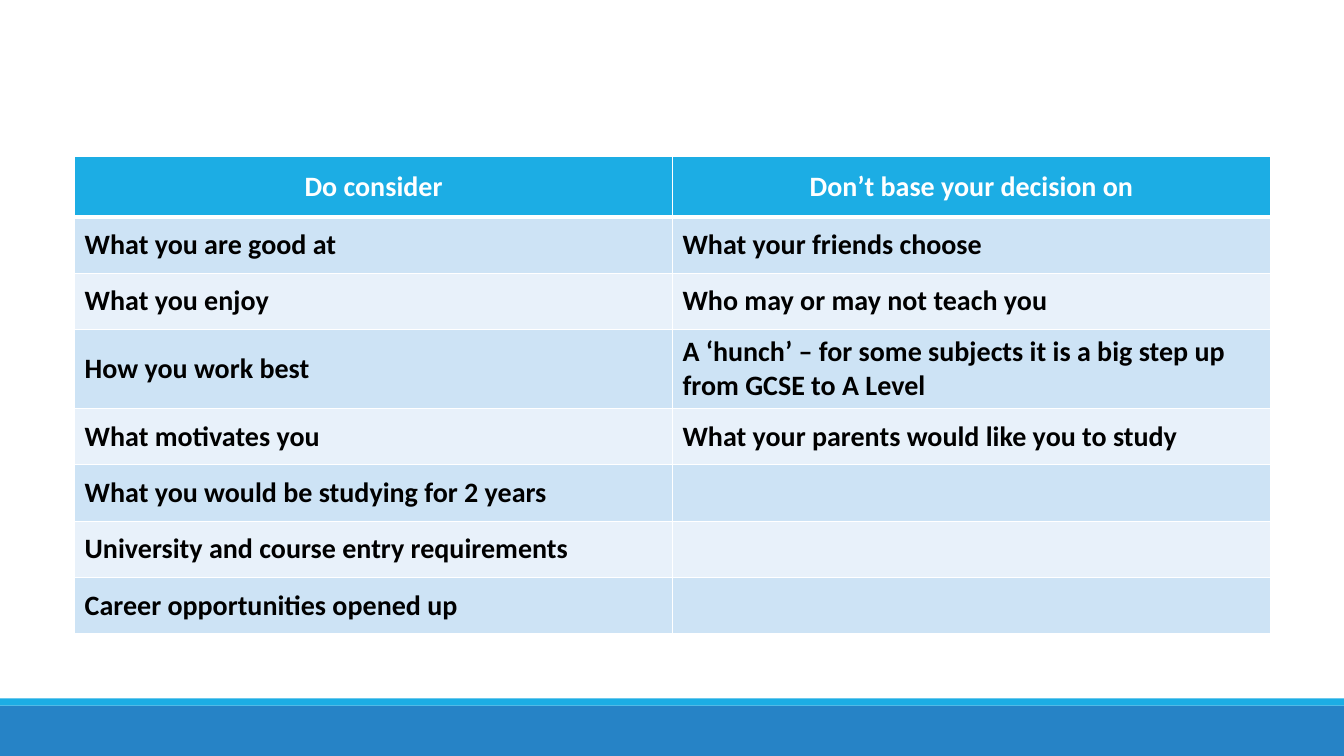
from lxml import etree
from pptx import Presentation
from pptx.dml.color import RGBColor
from pptx.enum.shapes import MSO_SHAPE
from pptx.enum.text import MSO_ANCHOR, PP_ALIGN
from pptx.oxml.ns import qn
from pptx.util import Inches, Pt

RECT = MSO_SHAPE.RECTANGLE
MIDDLE = MSO_ANCHOR.MIDDLE
LEFT, CENTER = PP_ALIGN.LEFT, PP_ALIGN.CENTER

COLORS = {
    "header": "1CADE4",
    "footer": "2683C6",
    "odd": "CDE3F5",
    "even": "E8F1FA",
    "white": "FFFFFF",
    "black": "000000",
}
ROWS = [
    ("Do consider", "Don’t base your decision on"),
    ("What you are good at", "What your friends choose"),
    ("What you enjoy", "Who may or may not teach you"),
    ("How you work best",
     "A ‘hunch’ – for some subjects it is a big step up from GCSE to A Level"),
    ("What motivates you", "What your parents would like you to study"),
    ("What you would be studying for 2 years", ""),
    ("University and course entry requirements", ""),
    ("Career opportunities opened up", ""),
]
BANDS = [("footer", 7, 0.5), ("header", 6.93, 0.07)]  # color, top, height
FONT = {"name": "Calibri", "size": Pt(20), "bold": True}
SLIDE_W, SLIDE_H = 13.33, 7.5
TABLE_LEFT, TABLE_TOP, COL_W = 0.74, 1.55, 5.93
HEADER_H, ROW_H = 0.6, 0.56


def rgb(name):
    return RGBColor.from_string(COLORS[name])


def add_borders(cell, widths):
    """Draw white cell borders; widths are points for left, right, top, bottom."""
    tc_pr = cell._tc.get_or_add_tcPr()
    for side, width in zip("LRTB", widths):
        ln = etree.SubElement(tc_pr, qn(f"a:ln{side}"), w=str(Pt(width)))
        fill = etree.SubElement(ln, qn("a:solidFill"))
        etree.SubElement(fill, qn("a:srgbClr"), val=COLORS["white"])


def fill_cell(cell, text, row):
    header = row == 0
    add_borders(cell, (1, 1, 3 if row == 1 else 1, 3 if header else 1))
    cell.fill.solid()
    cell.fill.fore_color.rgb = rgb("header" if header else "odd" if row % 2 else "even")
    cell.vertical_anchor = MIDDLE
    p = cell.text_frame.paragraphs[0]
    p.alignment = CENTER if header else LEFT
    if text:
        r = p.add_run()
        r.text = text
        for key, value in FONT.items():
            setattr(r.font, key, value)
        r.font.color.rgb = rgb("white" if header else "black")


def add_band(s, color, top, height):
    band = s.shapes.add_shape(RECT, 0, Inches(top), Inches(SLIDE_W), Inches(height))
    band.shadow.inherit = False
    band.fill.solid()
    band.fill.fore_color.rgb = rgb(color)
    band.line.fill.background()


def add_advice_table(s):
    height = HEADER_H + ROW_H * (len(ROWS) - 1)
    table = s.shapes.add_table(
        len(ROWS), 2, Inches(TABLE_LEFT), Inches(TABLE_TOP),
        Inches(2 * COL_W), Inches(height)).table
    for col in table.columns:
        col.width = Inches(COL_W)
    for i, texts in enumerate(ROWS):
        table.rows[i].height = Inches(ROW_H if i else HEADER_H)
        for j, text in enumerate(texts):
            fill_cell(table.cell(i, j), text, i)


def main():
    prs = Presentation()
    prs.slide_width, prs.slide_height = Inches(SLIDE_W), Inches(SLIDE_H)
    s = prs.slides.add_slide(prs.slide_layouts[6])
    for band in BANDS:
        add_band(s, *band)
    add_advice_table(s)
    prs.save("out.pptx")


if __name__ == "__main__":
    main()
